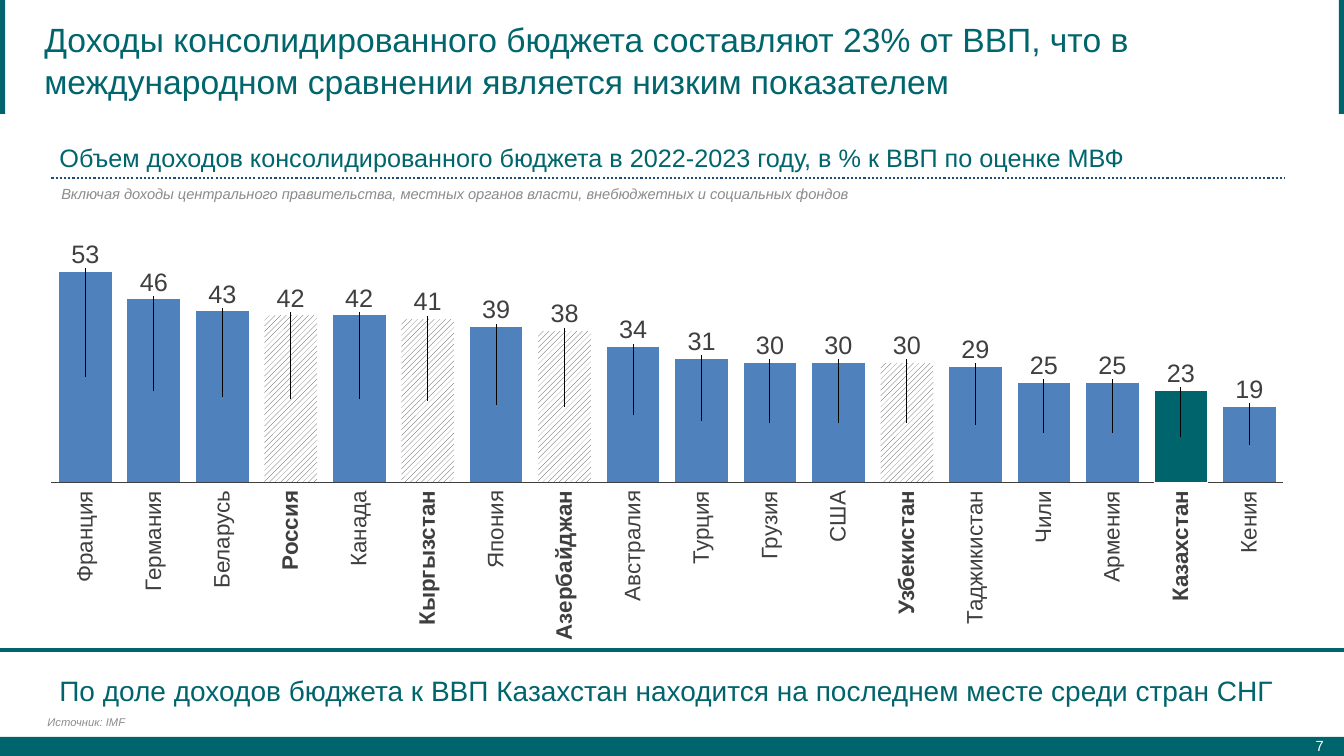
from dataclasses import dataclass

from pptx import Presentation
from pptx.chart.data import CategoryChartData
from pptx.dml.color import RGBColor
from pptx.enum.chart import XL_CHART_TYPE, XL_TICK_LABEL_POSITION, XL_TICK_MARK
from pptx.enum.dml import MSO_LINE, MSO_PATTERN
from pptx.enum.shapes import MSO_CONNECTOR, MSO_SHAPE
from pptx.enum.text import MSO_ANCHOR, MSO_AUTO_SIZE, PP_ALIGN
from pptx.oxml import parse_xml
from pptx.oxml.ns import nsdecls
from pptx.util import Inches, Pt

COLUMN = XL_CHART_TYPE.COLUMN_STACKED
NO_LABEL, NO_TICK = XL_TICK_LABEL_POSITION.NONE, XL_TICK_MARK.NONE
HATCH, DOTS = MSO_PATTERN.WIDE_UPWARD_DIAGONAL, MSO_LINE.ROUND_DOT
STRAIGHT, RECT = MSO_CONNECTOR.STRAIGHT, MSO_SHAPE.RECTANGLE
TOP, MID, LOW = MSO_ANCHOR.TOP, MSO_ANCHOR.MIDDLE, MSO_ANCHOR.BOTTOM
LEFT, CENTER, RIGHT = PP_ALIGN.LEFT, PP_ALIGN.CENTER, PP_ALIGN.RIGHT


@dataclass(frozen=True)
class Theme:
    font: str = "Arial"
    teal: str = "00646C"
    head: str = "00656D"
    navy: str = "1F4E79"
    edge: str = "007770"
    ink: str = "3F3F3F"
    gray: str = "8C8C8C"
    bar: str = "D6D7D9"
    white: str = "FFFFFF"
    title: float = 24
    claim: float = 20
    sub: float = 18
    name: float = 16
    note: float = 10.5
    source: float = 8


T = Theme()
WIDE, HIGH = 13.33, 7.5
PLOT = (0.007, 0.191, 0.985, 0.672)  # shares of the chart's box

# Country, revenue in % of GDP, length of the name
ROWS = [
    ("Франция", 53, 0.91), ("Германия", 46, 0.99), ("Беларусь", 43, 0.97),
    ("Россия", 42, 0.79), ("Канада", 42, 0.75), ("Кыргызстан", 41, 1.34),
    ("Япония", 39, 0.77), ("Азербайджан", 38, 1.48), ("Австралия", 34, 1.1),
    ("Турция", 31, 0.73), ("Грузия", 30, 0.69), ("США", 30, 0.51),
    ("Узбекистан", 30, 1.23), ("Таджикистан", 29, 1.33), ("Чили", 25, 0.53),
    ("Армения", 25, 0.91), ("Казахстан", 23, 1.1), ("Кения", 19, 0.62),
]
HOME = "Казахстан"
PEERS = {"Россия", "Кыргызстан", "Азербайджан", "Узбекистан"}
PEAK = max(value for _, value, _ in ROWS)


def rgb(code):
    return RGBColor.from_string(code)


def style(font, size, color, bold=False, italic=False):
    font.name, font.size, font.color.rgb = T.font, Pt(size), rgb(color)
    font.bold, font.italic = bold, italic


def place(shape, box):
    shape.left, shape.top, shape.width, shape.height = map(Inches, box)


def text(slide, box, words, size, color, shape=None, align=LEFT, anchor=TOP,
         pad=(0.1, 0.05), wrap=True, space=1.0, turn=False, **look):
    shape = shape or slide.shapes.add_textbox(0, 0, 0, 0)
    place(shape, box)
    frame = shape.text_frame
    frame.text = words
    frame.auto_size = MSO_AUTO_SIZE.NONE
    frame.word_wrap, frame.vertical_anchor = wrap, anchor
    frame.margin_left = frame.margin_right = Inches(pad[0])
    frame.margin_top = frame.margin_bottom = Inches(pad[1])
    if turn:
        frame._txBody.bodyPr.set("vert", "vert270")
    para = frame.paragraphs[0]
    para.alignment, para.line_spacing = align, space
    style(para.runs[0].font, size, color, **look)


def block(slide, box):
    shape = slide.shapes.add_shape(RECT, *map(Inches, box))
    shape.shadow.inherit = False
    shape.fill.solid()
    shape.fill.fore_color.rgb = rgb(T.teal)
    shape.line.fill.background()


def rule(slide, left, right, y, color, width, dash=None):
    line = slide.shapes.add_connector(
        STRAIGHT, Inches(left), Inches(y), Inches(right), Inches(y))
    line.line.color.rgb, line.line.width = rgb(color), Pt(width)
    if dash:
        line.line.dash_style = dash
    line._element.spPr.append(parse_xml(f"<a:effectLst {nsdecls('a')}/>"))


def layout(x, y, size=""):
    return parse_xml(
        f'<c:layout {nsdecls("c")}><c:manualLayout>{size and "<c:layoutTarget val=%r/>" % "inner"}'
        f'{size and "<c:xMode val=%r/><c:yMode val=%r/>" % ("edge", "edge")}'
        f'<c:x val="{x}"/><c:y val="{y}"/>{size}</c:manualLayout></c:layout>')


def frame(slide, box):
    """Side marks and the bar at the foot with the page number."""
    x, y, w, h = box
    block(slide, (x, y + h - 0.19, w, 0.2))
    text(slide, (x + w - 1.41, y + h - 0.3, 1.29, 0.4), "7", T.note, T.white,
         align=RIGHT, anchor=MID, pad=(0.08, 0.04))
    for left in (x, x + w - 0.05):
        block(slide, (left, y - 0.02, 0.05, 1.15))


def header(slide, box):
    """Chart heading, dotted rule and note."""
    x, y, w, h = box
    text(slide, (x, y, 11.42, 0.38),
         "Объем доходов консолидированного бюджета в 2022-2023 году, в % к ВВП по оценке МВФ",
         T.sub, T.head, anchor=LOW, pad=(0.08, 0.04))
    rule(slide, x, x + w, y + 0.4, T.navy, 1.5, DOTS)
    text(slide, (x, y + 0.41, 8.17, h - 0.41),
         "Включая доходы центрального правительства, местных органов власти, "
         "внебюджетных и социальных фондов",
         T.note, T.gray, wrap=False, italic=True)


def paint(point, name):
    """Fill that sets a country apart."""
    fill = point.format.fill
    if name in PEERS:
        fill.patterned()
        fill.pattern = HATCH
        fill.fore_color.rgb, fill.back_color.rgb = rgb(T.ink), rgb(T.white)
    elif name == HOME:
        fill.solid()
        fill.fore_color.rgb = rgb(T.teal)
        point.format.line.color.rgb = rgb(T.white)


def mark(series, tall):
    """Value labels above the bars, tied to them by leader lines."""
    labels = series.data_labels
    labels.show_value = True
    style(labels.font, T.sub, T.ink)
    for i, (name, value, _) in enumerate(ROWS):
        point = series.points[i]
        paint(point, name)
        style(point.data_label.font, T.sub, T.ink)
        rise = value / PEAK * PLOT[3] / 2 + 0.17 / tall
        spot = labels._element.xpath(f"c:dLbl[c:idx/@val='{i}']/c:idx")[0]
        spot.addnext(layout(0, round(-rise, 4)))
    labels._element.append(parse_xml(
        f'<c:extLst {nsdecls("c")}><c:ext uri="{{CE6537A1-D6FC-4f65-9D91-7224C49458BB}}" '
        'xmlns:c15="http://schemas.microsoft.com/office/drawing/2012/chart">'
        '<c15:showLeaderLines val="1"/></c:ext></c:extLst>'))


def bars(slide, box):
    """Column chart with turned country names under it."""
    x, y, w, h = box
    data = CategoryChartData(number_format="0")
    data.categories = [str(i + 1) for i in range(len(ROWS))]
    data.add_series("Series 1", [value for _, value, _ in ROWS])
    chart = slide.shapes.add_chart(COLUMN, *map(Inches, box), data).chart
    chart.has_legend = chart.has_title = False
    style(chart.font, 10, T.ink)

    base, scale = chart.category_axis, chart.value_axis
    base.tick_label_position = NO_LABEL
    base.major_tick_mark = base.minor_tick_mark = NO_TICK
    base.format.line.color.rgb, base.format.line.width = rgb(T.ink), Pt(0.75)
    scale.minimum_scale, scale.maximum_scale = 0, PEAK
    scale.has_major_gridlines = scale.visible = False

    plot = chart.plots[0]
    plot.gap_width, plot.overlap, plot.vary_by_categories = 30, 100, False
    series = plot.series[0]
    series.format.fill.solid()
    series.format.fill.fore_color.rgb = rgb(T.bar)
    series.format.line.color.rgb, series.format.line.width = rgb(T.edge), Pt(0.5)
    mark(series, h)

    area = chart._chartSpace.chart.plotArea
    for old in area.xpath("c:layout"):
        area.remove(old)
    px, py, pw, ph = PLOT
    area.insert(0, layout(px, py, f'<c:w val="{pw}"/><c:h val="{ph}"/>'))

    step = w * pw / len(ROWS)
    for i, (name, _, size) in enumerate(ROWS):
        mid = x + w * px + step * (i + 0.5)
        text(slide, (mid - 0.12, y + 2.77, 0.24, size), name, T.name, T.ink,
             align=RIGHT, anchor=MID, pad=(0, 0), wrap=False, space=0.9,
             turn=True, bold=name in PEERS or name == HOME)


def footer(slide, box):
    """Conclusion under a rule, with the source."""
    x, y, w, h = box
    text(slide, (x + 0.09, y + 0.01, w - 0.29, h),
         "По доле доходов бюджета к ВВП Казахстан находится на последнем месте среди стран СНГ",
         T.claim, T.teal, align=CENTER, anchor=MID)
    rule(slide, x, x + w, y, T.teal, 3)
    text(slide, (x + 0.47, y + 0.65, 6.85, 0.13), "Источник: IMF",
         T.source, T.gray, anchor=LOW, pad=(0, 0), italic=True)


def main():
    deck = Presentation()
    deck.slide_width, deck.slide_height = Inches(WIDE), Inches(HIGH)
    slide = deck.slides.add_slide(deck.slide_layouts[5])
    frame(slide, (0, 0, WIDE, HIGH))
    text(slide, (0.34, 0.2, 12.4, 0.77),
         "Доходы консолидированного бюджета составляют 23% от ВВП, что в "
         "международном сравнении является низким показателем",
         T.title, T.head, shape=slide.shapes.title, anchor=MID, space=1.05)
    header(slide, (0.51, 1.37, 12.23, 0.69))
    bars(slide, (0.42, 2.1, 12.41, 3.11))
    footer(slide, (0, 6.45, WIDE, 0.77))
    deck.save("out.pptx")


if __name__ == "__main__":
    main()
